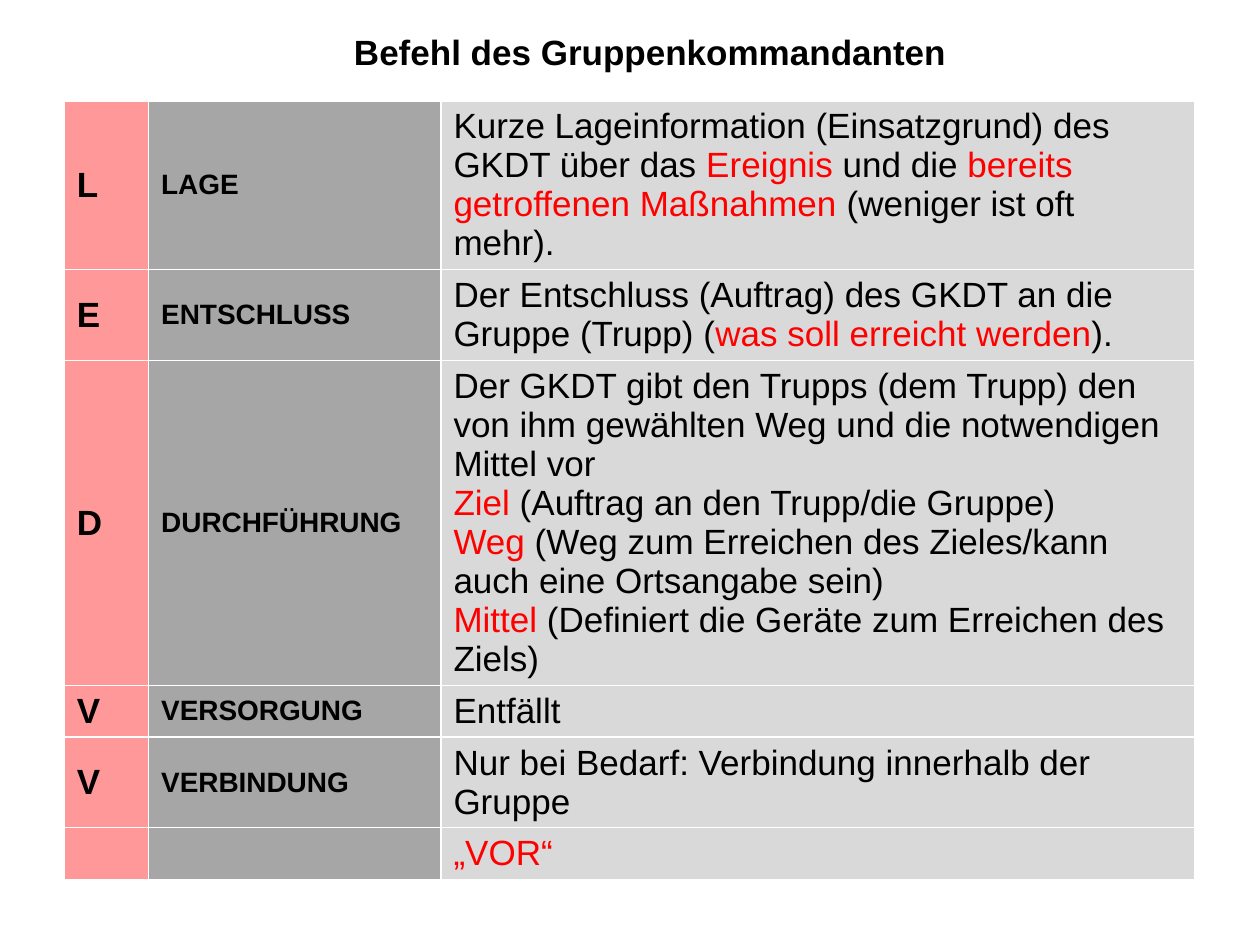
"""Build the slide with the order scheme of the group commander."""
from typing import NamedTuple

from lxml import etree
from pptx import Presentation
from pptx.dml.color import RGBColor
from pptx.enum import text
from pptx.oxml import ns
from pptx.util import Inches, Pt

BLACK, RED, WHITE = "000000", "FF0000", "FFFFFF"
COLUMN_WIDTHS = (0.67, 2.32, 5.98)
COLUMN_FILLS = ("FF9999", "A6A6A6", "D9D9D9")
COLUMN_SIZES = (20, 16, 20)
ROW_HEIGHT = 0.41


class Step(NamedTuple):
    """One step of the order; asterisks enclose the red words."""
    letter: str
    keyword: str
    explanation: tuple[str, ...]


STEPS = (
    Step("L", "LAGE", (
        "Kurze Lageinformation (Einsatzgrund) des GKDT über das *Ereignis* und die "
        "*bereits getroffenen Maßnahmen* (weniger ist oft mehr).",)),
    Step("E", "ENTSCHLUSS", (
        "Der Entschluss (Auftrag) des GKDT an die Gruppe (Trupp) "
        "(*was soll erreicht werden*).",)),
    Step("D", "DURCHFÜHRUNG", (
        "Der GKDT gibt den Trupps (dem Trupp) den von ihm gewählten Weg und die notwendigen",
        "Mittel vor",
        "*Ziel* (Auftrag an den Trupp/die Gruppe)",
        "*Weg* (Weg zum Erreichen des Zieles/kann auch eine Ortsangabe sein)",
        "*Mittel* (Definiert die Geräte zum Erreichen des Ziels)")),
    Step("V", "VERSORGUNG", ("Entfällt",)),
    Step("V", "VERBINDUNG", ("Nur bei Bedarf: Verbindung innerhalb der Gruppe",)),
    Step("", "", ("*„VOR“*",)),
)


def rgb(value: str) -> RGBColor:
    """Turn a hex string into a colour."""
    return RGBColor.from_string(value)


def style_font(font, size: float, bold: bool, color: str = BLACK) -> None:
    """Set the typeface, size, weight and colour of a font."""
    font.name, font.size, font.bold = "Arial", Pt(size), bold
    font.color.rgb = rgb(color)


def add_marked_runs(paragraph, marked: str, size: float, bold: bool) -> None:
    """Add the words of a paragraph, red between asterisks."""
    for index, words in enumerate(marked.split("*")):
        if words:
            run = paragraph.add_run()
            run.text = words
            style_font(run.font, size, bold, RED if index % 2 else BLACK)


def set_borders(cell, color: str, points: float) -> None:
    """Draw the same line on all four sides of a cell."""
    properties = cell._tc.get_or_add_tcPr()
    for position, side in enumerate(("lnL", "lnR", "lnT", "lnB")):
        line = etree.Element(ns.qn(f"a:{side}"), w=str(Pt(points)))
        fill = etree.SubElement(line, ns.qn("a:solidFill"))
        etree.SubElement(fill, ns.qn("a:srgbClr"), val=color)
        properties.insert(position, line)


def fill_cell(cell, lines: tuple[str, ...], size: float, bold: bool, fill: str) -> None:
    """Format a cell and write its paragraphs."""
    cell.fill.solid()
    cell.fill.fore_color.rgb = rgb(fill)
    set_borders(cell, WHITE, 1)
    cell.vertical_anchor = text.MSO_ANCHOR.MIDDLE
    frame = cell.text_frame
    for index, marked in enumerate(lines):
        paragraph = frame.add_paragraph() if index else frame.paragraphs[0]
        add_marked_runs(paragraph, marked, size, bold)


def add_heading(slide, heading: str) -> None:
    """Place and format the title of the slide."""
    title = slide.shapes.title
    title.left, title.top = Inches(2.09), Inches(0.21)
    title.width, title.height = Inches(6.14), Inches(0.4)
    title.fill.solid()
    title.fill.fore_color.rgb = rgb(WHITE)
    frame = title.text_frame
    frame.text = heading
    frame.auto_size = text.MSO_AUTO_SIZE.NONE
    frame.vertical_anchor = text.MSO_ANCHOR.MIDDLE
    frame.paragraphs[0].alignment = text.PP_ALIGN.CENTER
    style_font(frame.paragraphs[0].runs[0].font, 20, True)


def add_steps(slide, steps: tuple[Step, ...]) -> None:
    """Add the table with one row for each step."""
    scheme = slide.shapes.add_table(
        len(steps), len(COLUMN_WIDTHS), Inches(0.51), Inches(0.8),
        Inches(sum(COLUMN_WIDTHS)), Inches(ROW_HEIGHT * len(steps))).table
    scheme.first_row = scheme.horz_banding = False
    for column, width in zip(scheme.columns, COLUMN_WIDTHS):
        column.width = Inches(width)
    for row, step in zip(scheme.rows, steps):
        row.height = Inches(ROW_HEIGHT)
        contents = ((step.letter,), (step.keyword,), step.explanation)
        for index, (cell, lines) in enumerate(zip(row.cells, contents)):
            fill_cell(cell, lines, COLUMN_SIZES[index], index < 2, COLUMN_FILLS[index])


def main() -> None:
    """Create and save the presentation."""
    presentation = Presentation()
    presentation.slide_width, presentation.slide_height = Inches(10), Inches(7.5)
    slide = presentation.slides.add_slide(presentation.slide_layouts[5])
    add_heading(slide, "Befehl des Gruppenkommandanten")
    add_steps(slide, STEPS)
    presentation.save("out.pptx")


if __name__ == "__main__":
    main()
